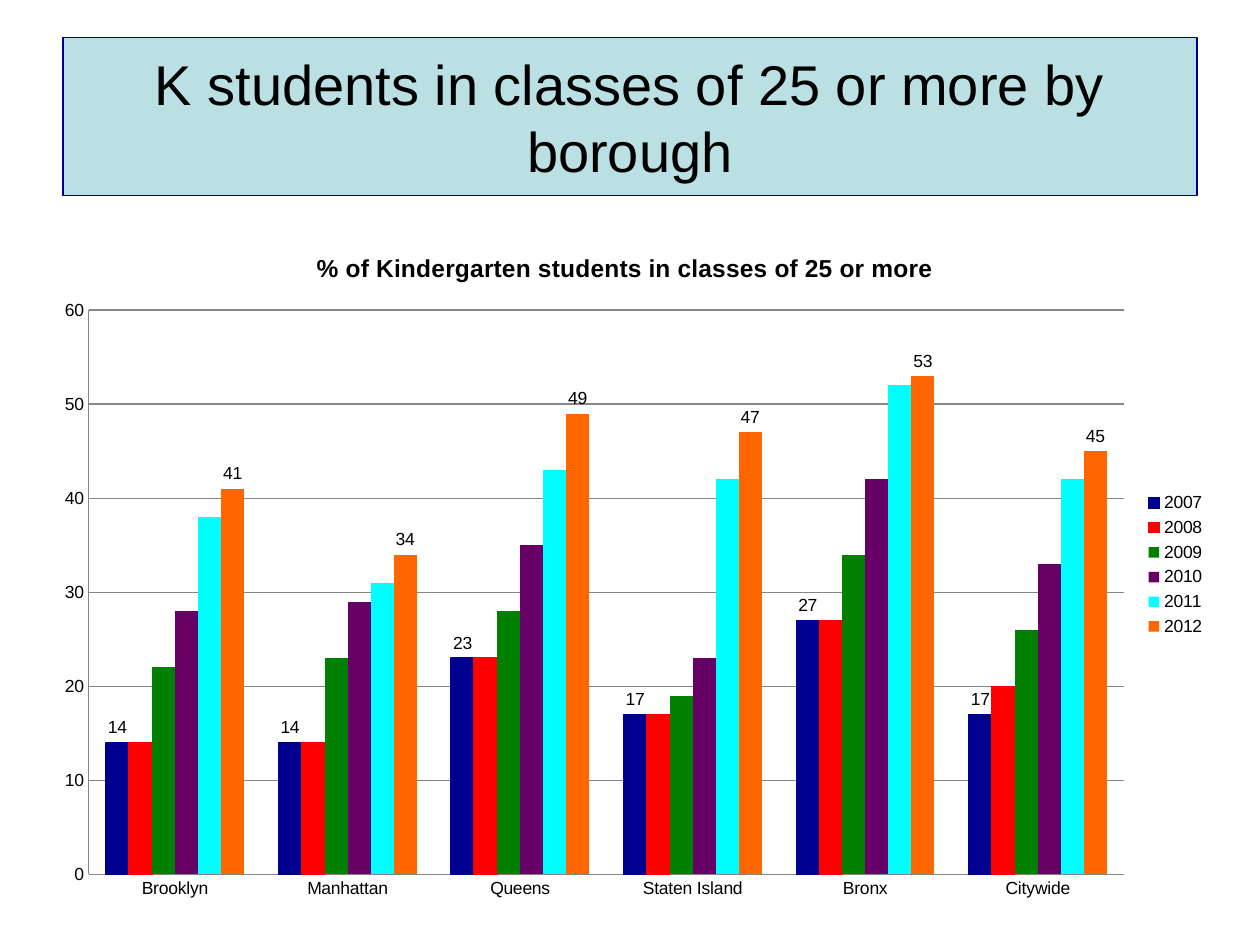
from lxml.etree import SubElement
from pptx import Presentation
from pptx.chart.data import CategoryChartData
from pptx.dml.color import RGBColor
from pptx.enum.chart import XL_CHART_TYPE, XL_LABEL_POSITION, XL_LEGEND_POSITION, XL_TICK_MARK
from pptx.enum.shapes import MSO_SHAPE
from pptx.enum.text import MSO_ANCHOR, PP_ALIGN
from pptx.oxml.ns import qn
from pptx.util import Cm, Pt

TITLE = "K students in classes of 25 or more by borough"
CHART_TITLE = "% of Kindergarten students in classes of 25 or more"
BOROUGHS = ["Brooklyn", "Manhattan", "Queens", "Staten Island", "Bronx", "Citywide"]
YEARS = [
    ("2007", [14, 14, 23, 17, 27, 17], "000090"),
    ("2008", [14, 14, 23, 17, 27, 20], "FF0000"),
    ("2009", [22, 23, 28, 19, 34, 26], "008000"),
    ("2010", [28, 29, 35, 23, 42, 33], "660066"),
    ("2011", [38, 31, 43, 42, 52, 42], "00FFFF"),
    ("2012", [41, 34, 49, 47, 53, 45], "FF6600"),
]
LABELLED = ["2007", "2012"]
OUTLINED = ["2007", "2008"]
GRID = "868686"


def rgb(value):
    return RGBColor.from_string(value)


def set_font(font, size, bold=False, color="000000"):
    font.name = "Arial"
    font.size = Pt(size)
    font.bold = bold
    font.color.rgb = rgb(color)


def set_line(line, color, width=0.75):
    line.color.rgb = rgb(color)
    line.width = Pt(width)


def write(tf, text, size, bold=False, align=PP_ALIGN.CENTER):
    p = tf.paragraphs[0]
    p.alignment = align
    r = p.add_run()
    r.text = text
    set_font(r.font, size, bold)


def place(element, index, **fractions):
    for old in element.findall(qn("c:layout")):
        element.remove(old)
    layout = SubElement(element, qn("c:layout"))
    element.insert(index, layout)
    manual = SubElement(layout, qn("c:manualLayout"))
    if "w" in fractions:
        SubElement(manual, qn("c:layoutTarget")).set("val", "inner")
    for key in ("x", "y"):
        SubElement(manual, qn(f"c:{key}Mode")).set("val", "edge")
    for key, value in fractions.items():
        SubElement(manual, qn(f"c:{key}")).set("val", str(value))


def add_title(s):
    sp = s.shapes.add_shape(MSO_SHAPE.RECTANGLE, Cm(1.27), Cm(0.76), Cm(22.86), Cm(3.18))
    sp.shadow.inherit = False
    sp.fill.solid()
    sp.fill.fore_color.rgb = rgb("BBE0E3")
    set_line(sp.line, "000090")
    tf = sp.text_frame
    tf.word_wrap = True
    tf.vertical_anchor = MSO_ANCHOR.MIDDLE
    write(tf, TITLE, 32)


def add_borough_chart(s):
    data = CategoryChartData(number_format="0")
    data.categories = BOROUGHS
    for year, values, _ in YEARS:
        data.add_series(year, values)
    chart = s.shapes.add_chart(XL_CHART_TYPE.COLUMN_CLUSTERED, Cm(0.84), Cm(4.45),
                               Cm(23.72), Cm(13.87), data).chart
    set_font(chart.font, 10)

    chart.has_title = True
    write(chart.chart_title.text_frame, CHART_TITLE, 14, bold=True)
    place(chart.chart_title._element, 1, x=0.23, y=0.04)
    place(chart.plots[0]._element.getparent(), 0, x=0.04, y=0.13, w=0.88, h=0.82)

    chart.has_legend = True
    chart.legend.position = XL_LEGEND_POSITION.RIGHT
    chart.legend.include_in_layout = False

    for axis in (chart.category_axis, chart.value_axis):
        axis.major_tick_mark = axis.minor_tick_mark = XL_TICK_MARK.NONE
        set_line(axis.format.line, GRID)
    axis = chart.value_axis
    axis.minimum_scale, axis.maximum_scale, axis.major_unit = 0, 60, 10
    axis.tick_labels.number_format = "0"
    axis.tick_labels.number_format_is_linked = False
    set_line(axis.major_gridlines.format.line, GRID)

    plot = chart.plots[0]
    plot.gap_width = 150
    plot.overlap = 0
    plot.vary_by_categories = False
    for series, (year, _, color) in zip(plot.series, YEARS):
        series.format.fill.solid()
        series.format.fill.fore_color.rgb = rgb(color)
        if year in OUTLINED:
            set_line(series.format.line, color)
        if year in LABELLED:
            labels = series.data_labels
            labels.show_value = True
            labels.number_format = "0"
            labels.number_format_is_linked = False
            labels.position = XL_LABEL_POSITION.OUTSIDE_END
            set_font(labels.font, 10)


def main():
    prs = Presentation()
    prs.slide_width, prs.slide_height = Cm(25.4), Cm(19.05)
    s = prs.slides.add_slide(prs.slide_layouts[6])
    add_title(s)
    add_borough_chart(s)
    prs.save("out.pptx")


if __name__ == "__main__":
    main()
